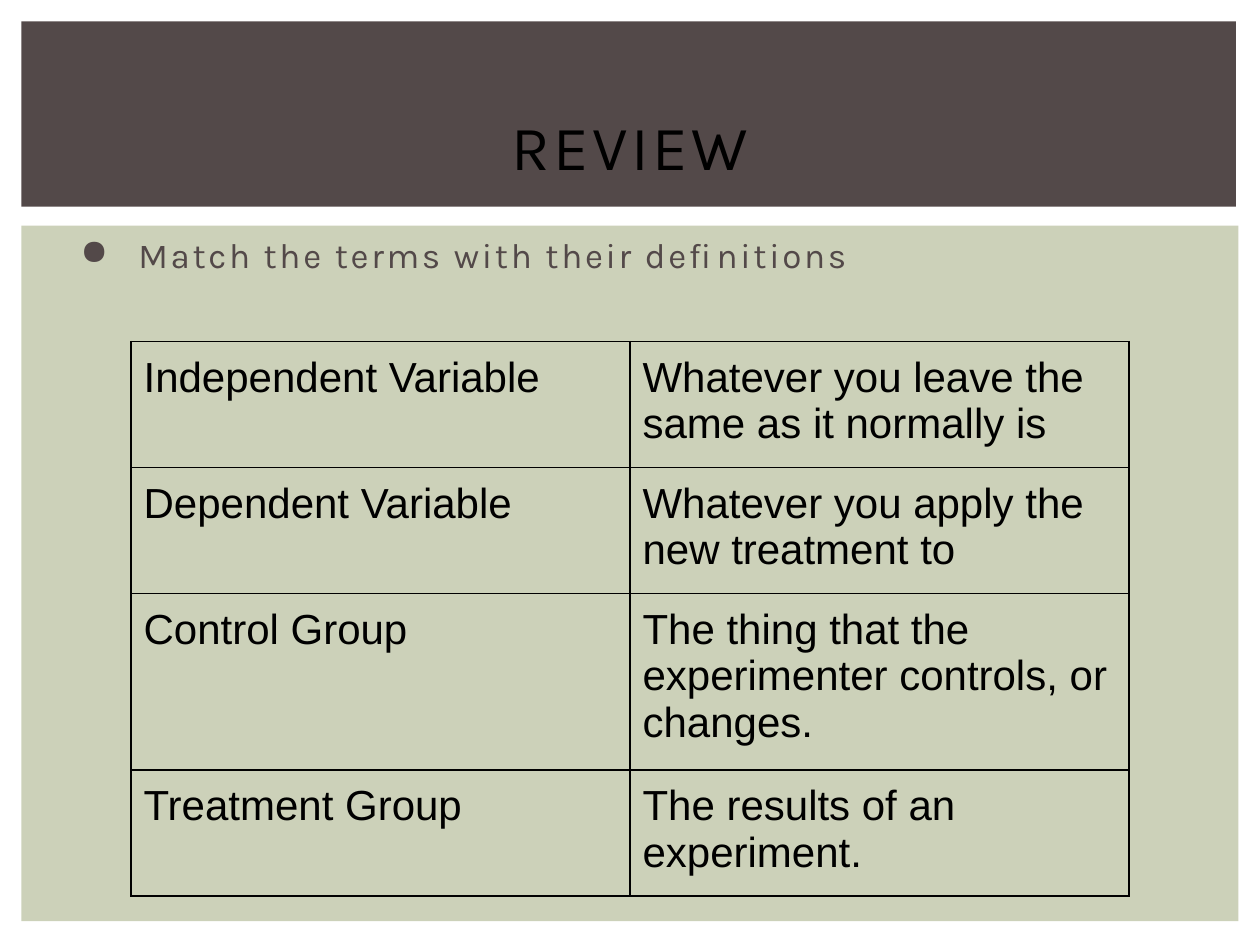
import pptx
import pptx.util
import pptx.dml.color
import pptx.enum.shapes
import pptx.enum.text
import pptx.oxml
import pptx.oxml.ns

COLORS = {"paper": "FFFFFF", "panel": "CCD1B9", "band": "534949", "ink": "000000"}
WIDTH, HEIGHT = 10, 7.5
INSET = 0.1
TERMS = [
    ("Independent Variable", "Whatever you leave the same as it normally is", 1),
    ("Dependent Variable", "Whatever you apply the new treatment to", 1),
    ("Control Group", "The thing that the experimenter controls, or changes.", 1.4),
    ("Treatment Group", "The results of an experiment.", 1),
]


def rgb(name):
    return pptx.dml.color.RGBColor.from_string(COLORS[name])


def emu(box):
    return [pptx.util.Inches(length) for length in box]


def add_xml(parent, markup, position=None):
    namespace = pptx.oxml.ns.nsdecls("a")
    tag, rest = markup[:-1].split(" ", 1) if " " in markup.split(">")[0] else (markup.split(">")[0], None)
    source = markup.replace(tag, f"{tag} {namespace}", 1)
    element = pptx.oxml.parse_xml(source)
    parent.insert(len(parent) if position is None else position, element)


def write_text(frame, text, *, size, font, color, spacing=0, align="LEFT", bullet=None):
    para = frame.paragraphs[0]
    para.alignment = getattr(pptx.enum.text.PP_ALIGN, align)
    span = para.add_run()
    span.text = text
    span.font.size = pptx.util.Pt(size)
    span.font.name = font
    span.font.bold = False
    span.font.color.rgb = rgb(color)
    if spacing:
        span.font._element.set("spc", str(int(spacing * 100)))
    if bullet:
        properties = para._p.get_or_add_pPr()
        properties.set("marL", str(pptx.util.Inches(0.5)))
        properties.set("indent", str(pptx.util.Inches(-0.46)))
        add_xml(properties, f'<a:buClr><a:srgbClr val="{COLORS[color]}"/></a:buClr>')
        add_xml(properties, f'<a:buChar char="{bullet}"/>')


def add_panel(page, box, color):
    panel = page.shapes.add_shape(pptx.enum.shapes.MSO_SHAPE.RECTANGLE, *emu(box))
    panel.shadow.inherit = False
    panel.fill.solid()
    panel.fill.fore_color.rgb = rgb(color)
    panel.line.fill.background()


def add_text(page, box, text, anchor="TOP", **style):
    frame = page.shapes.add_textbox(*emu(box)).text_frame
    frame.word_wrap = True
    frame.vertical_anchor = getattr(pptx.enum.text.MSO_ANCHOR, anchor)
    frame.margin_left = frame.margin_right = pptx.util.Inches(INSET)
    frame.margin_top = frame.margin_bottom = pptx.util.Inches(INSET)
    write_text(frame, text, **style)


def style_cell(cell, text):
    cell.margin_left = cell.margin_right = pptx.util.Inches(INSET)
    cell.margin_top = cell.margin_bottom = pptx.util.Inches(INSET)
    cell.fill.background()
    properties = cell._tc.get_or_add_tcPr()
    for position, side in enumerate("LRTB"):
        add_xml(
            properties,
            f'<a:ln{side} w="{pptx.util.Pt(0.75)}"><a:solidFill>'
            f'<a:srgbClr val="{COLORS["ink"]}"/></a:solidFill></a:ln{side}>',
            position,
        )
    write_text(cell.text_frame, text, size=24, font="Arial", color="ink")


def add_header(page, box):
    left, top, width, height = box
    add_panel(page, box, "band")
    add_text(page, (0.05 * WIDTH, 0.3, 0.9 * WIDTH, 1.25), "REVIEW", "BOTTOM",
             size=36, font="Karla", color="ink", spacing=2, align="CENTER")


def add_terms(page, box):
    left, top, width, height = box
    shares = [share for *texts, share in TERMS]
    frame = page.shapes.add_table(len(TERMS), 2, *emu(box))
    table = frame.table
    table.first_row = table.horz_banding = False
    for column in table.columns:
        column.width = pptx.util.Inches(width / 2)
    for row, (*texts, share) in zip(table.rows, TERMS):
        row.height = pptx.util.Inches(height * share / sum(shares))
        for cell, text in zip(row.cells, texts):
            style_cell(cell, text)


def add_body(page, box):
    left, top, width, height = box
    add_panel(page, box, "panel")
    add_text(page, (0.05 * WIDTH, top - 0.04, 0.9 * WIDTH, height - 0.09),
             "Match the terms with their definitions",
             size=20, font="Karla", color="band", spacing=1.5, bullet="●")
    add_terms(page, (1.04, top + 0.92, 7.92, 4.4))


def main():
    deck = pptx.Presentation()
    deck.slide_width, deck.slide_height = emu((WIDTH, HEIGHT))
    page = deck.slides.add_slide(deck.slide_layouts[6])
    page.background.fill.solid()
    page.background.fill.fore_color.rgb = rgb("paper")
    add_body(page, (0.17, 1.79, 9.66, 5.52))
    add_header(page, (0.17, 0.17, 9.64, 1.47))
    deck.save("out.pptx")


if __name__ == "__main__":
    main()
